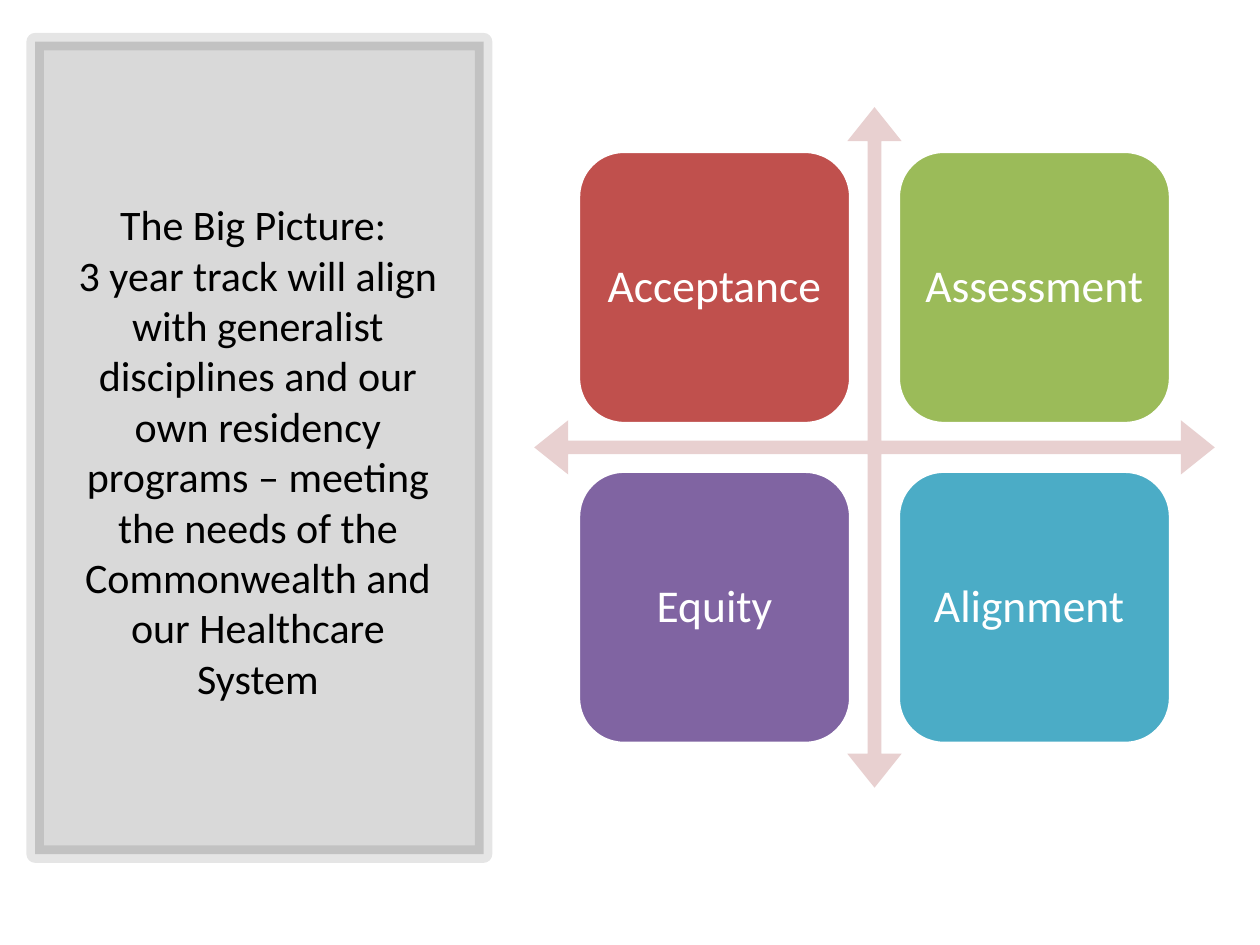
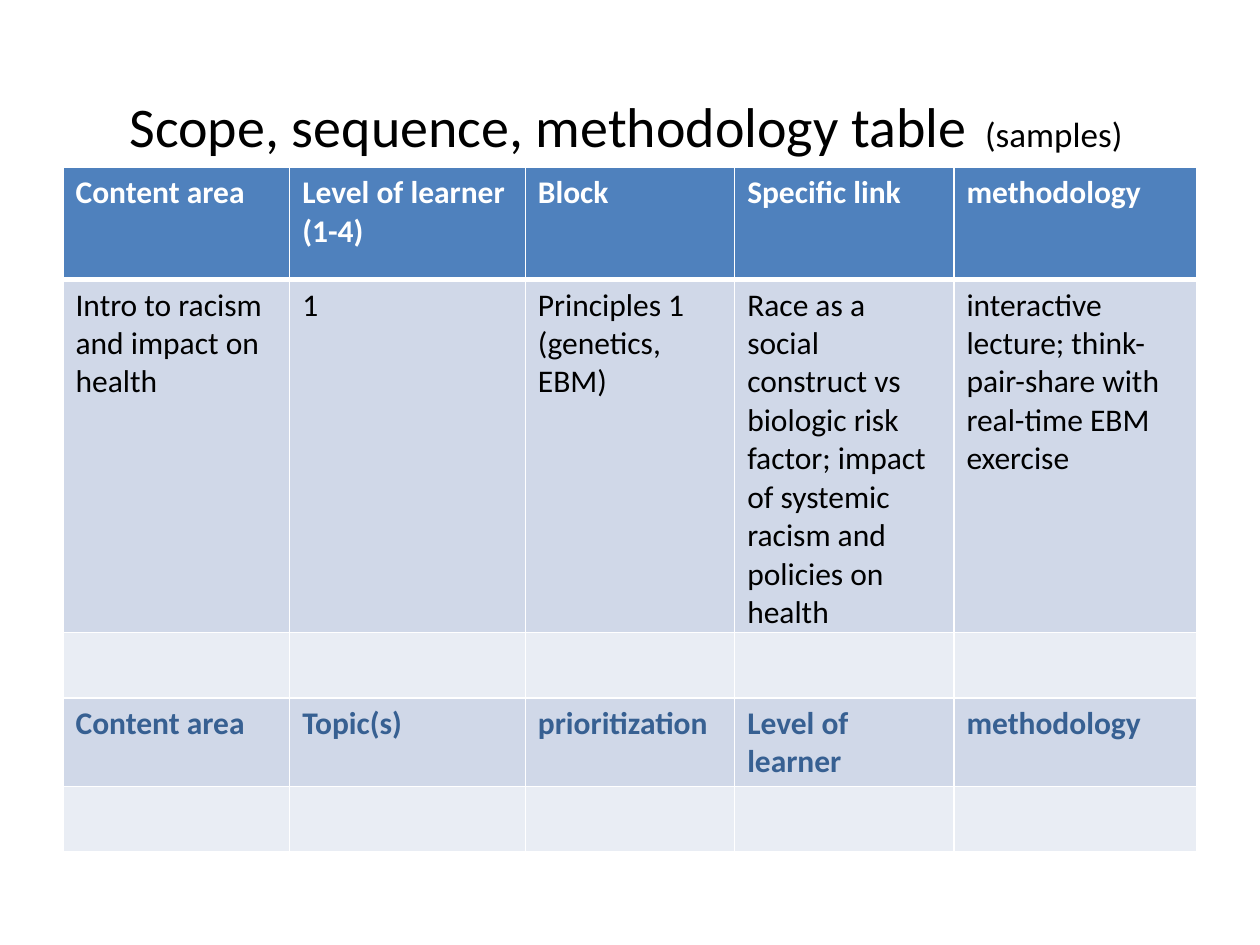
from dataclasses import dataclass

from lxml import etree
from pptx import Presentation
from pptx import util as u
from pptx.dml.color import RGBColor
from pptx.enum import shapes, text
from pptx.oxml import ns

# Content
BIG_PICTURE = ("The Big Picture: \n3 year track will align with generalist disciplines "
               "and our own residency programs – meeting the needs of the "
               "Commonwealth and our Healthcare System")
GOALS = [("Acceptance", "C0504D"), ("Assessment", "9BBB59"),
         ("Equity", "8064A2"), ("Alignment ", "4BACC6")]
TABLE_TITLE = [("Scope, sequence, methodology table", 32), (" ", 44), ("(samples) ", 20)]
EMPTY_ROW = [""] * 5
# Each row: style, height in cm, cell texts
TABLE_ROWS = [
    ("header", 2.26, ["Content area", "Level of learner (1-4)", "Block",
                      "Specific link", "methodology"]),
    ("body", 5.26, ["Intro to racism and impact on health", "1",
                    "Principles 1 (genetics, EBM)",
                    "Race as a social construct vs biologic risk factor; impact of "
                    "systemic racism and policies on health",
                    "interactive lecture; think-pair-share with real-time EBM exercise"]),
    ("blank", 1.32, EMPTY_ROW),
    ("subhead", 1.32, ["Content area", "Topic(s)", "prioritization",
                       "Level of learner", "methodology"]),
    ("blank", 1.32, EMPTY_ROW),
]
COLUMN_WIDTHS = [4.57, 4.75, 4.22, 4.42, 4.9]


@dataclass(frozen=True)
class Theme:
    font: str = "Calibri"
    ink: str = "000000"
    white: str = "FFFFFF"
    arrow: str = "E8D0D0"
    panel_size: int = 24
    goal_size: int = 26
    cell_size: int = 18


THEME = Theme()
# Fill, text colour, bold
ROW_STYLES = {
    "header": ("4F81BD", THEME.white, True),
    "body": ("D0D8E8", THEME.ink, False),
    "blank": ("E9EDF4", THEME.ink, False),
    "subhead": ("D0D8E8", "376092", True),
}


# Shared helpers
def write(frame, spans, *, size=18, color=THEME.ink, bold=False,
          align=text.PP_ALIGN.CENTER, spacing=1.0):
    """Fill a text frame with one paragraph; spans is a string or (text, size) pairs."""
    if isinstance(spans, str):
        spans = [(spans, size)]
    frame.word_wrap = True
    para = frame.paragraphs[0]
    para.alignment = align
    para.line_spacing = spacing
    for words, points in spans:
        for index, line in enumerate(words.split("\n")):
            if index:
                para.add_line_break()
            span = para.add_run()
            span.text = line
            span.font.name = THEME.font
            span.font.size = u.Pt(points)
            span.font.bold = bold
            span.font.color.rgb = RGBColor.from_string(color)


def add_title(page, place, spans, **style):
    frame = page.shapes.add_textbox(*map(u.Cm, place)).text_frame
    frame.vertical_anchor = text.MSO_ANCHOR.MIDDLE
    write(frame, spans, **style)


def add_box(page, kind, place, fill, line=None, width=0):
    box = page.shapes.add_shape(kind, *map(u.Cm, place))
    box.shadow.inherit = False
    box.fill.solid()
    box.fill.fore_color.rgb = RGBColor.from_string(fill)
    if line:
        box.line.color.rgb = RGBColor.from_string(line)
        box.line.width = u.Pt(width)
    else:
        box.line.fill.background()
    return box


def set_opacity(solid_fill, percent):
    etree.SubElement(solid_fill[0], ns.qn("a:alpha"), val=str(percent * 1000))


def set_borders(cell, color, widths):
    properties = cell._tc.get_or_add_tcPr()
    for side, width in zip("LRTB", widths):
        line = etree.SubElement(properties, ns.qn(f"a:ln{side}"), w=str(u.Pt(width)))
        fill = etree.SubElement(line, ns.qn("a:solidFill"))
        etree.SubElement(fill, ns.qn("a:srgbClr"), val=color)


# Slides
def build_big_picture(page):
    # Translucent panel with its text
    panel = add_box(page, shapes.MSO_SHAPE.RECTANGLE, (0.71, 0.84, 9.04, 16.38),
                    THEME.ink, line=THEME.ink, width=10)
    properties = panel._element.spPr
    outline = properties.find(ns.qn("a:ln"))
    set_opacity(properties.find(ns.qn("a:solidFill")), 15)
    set_opacity(outline.find(ns.qn("a:solidFill")), 10)
    etree.SubElement(outline, ns.qn("a:round"))
    add_title(page, (1.24, 1.78, 7.92, 14.61), BIG_PICTURE, size=THEME.panel_size)

    # Four-way arrow
    left, top, side = 10.77, 2.16, 13.72
    arrow = add_box(page, shapes.MSO_SHAPE.QUAD_ARROW, (left, top, side, side), THEME.arrow)
    for index, value in enumerate((0.02, 0.04, 0.05)):
        arrow.adjustments[index] = value

    # Goals in the quadrants, sized in proportion to the arrow
    margin, tile, step = 0.065 * side, 0.4 * side, 0.47 * side
    for index, (goal, color) in enumerate(GOALS):
        row, column = divmod(index, 2)
        place = (left + margin + column * step, top + margin + row * step, tile, tile)
        box = add_box(page, shapes.MSO_SHAPE.ROUNDED_RECTANGLE, place, color,
                      line=THEME.white, width=2)
        frame = box.text_frame
        frame.margin_left = frame.margin_right = u.Cm(0.25)
        frame.vertical_anchor = text.MSO_ANCHOR.MIDDLE
        write(frame, goal, size=THEME.goal_size, color=THEME.white, spacing=0.9)


def build_scope_table(page):
    add_title(page, (1.27, 0.76, 22.86, 3.18), TABLE_TITLE)
    heights = [height for _, height, _ in TABLE_ROWS]
    place = (1.27, 3.38, sum(COLUMN_WIDTHS), sum(heights))
    table = page.shapes.add_table(len(TABLE_ROWS), len(COLUMN_WIDTHS),
                                  *map(u.Cm, place)).table
    for column, width in zip(table.columns, COLUMN_WIDTHS):
        column.width = u.Cm(width)
    for index, (style, height, words) in enumerate(TABLE_ROWS):
        fill, color, bold = ROW_STYLES[style]
        table.rows[index].height = u.Cm(height)
        # A thick rule separates the header from the row below it
        widths = (1, 1, 3 if index == 1 else 1, 3 if index == 0 else 1)
        for cell, entry in zip(table.rows[index].cells, words):
            set_borders(cell, THEME.white, widths)
            cell.fill.solid()
            cell.fill.fore_color.rgb = RGBColor.from_string(fill)
            if entry:
                write(cell.text_frame, entry, size=THEME.cell_size, color=color,
                      bold=bold, align=text.PP_ALIGN.LEFT)


def main():
    deck = Presentation()
    deck.slide_width, deck.slide_height = u.Cm(25.4), u.Cm(19.05)
    for build in (build_big_picture, build_scope_table):
        build(deck.slides.add_slide(deck.slide_layouts[6]))
    deck.save("out.pptx")


if __name__ == "__main__":
    main()
